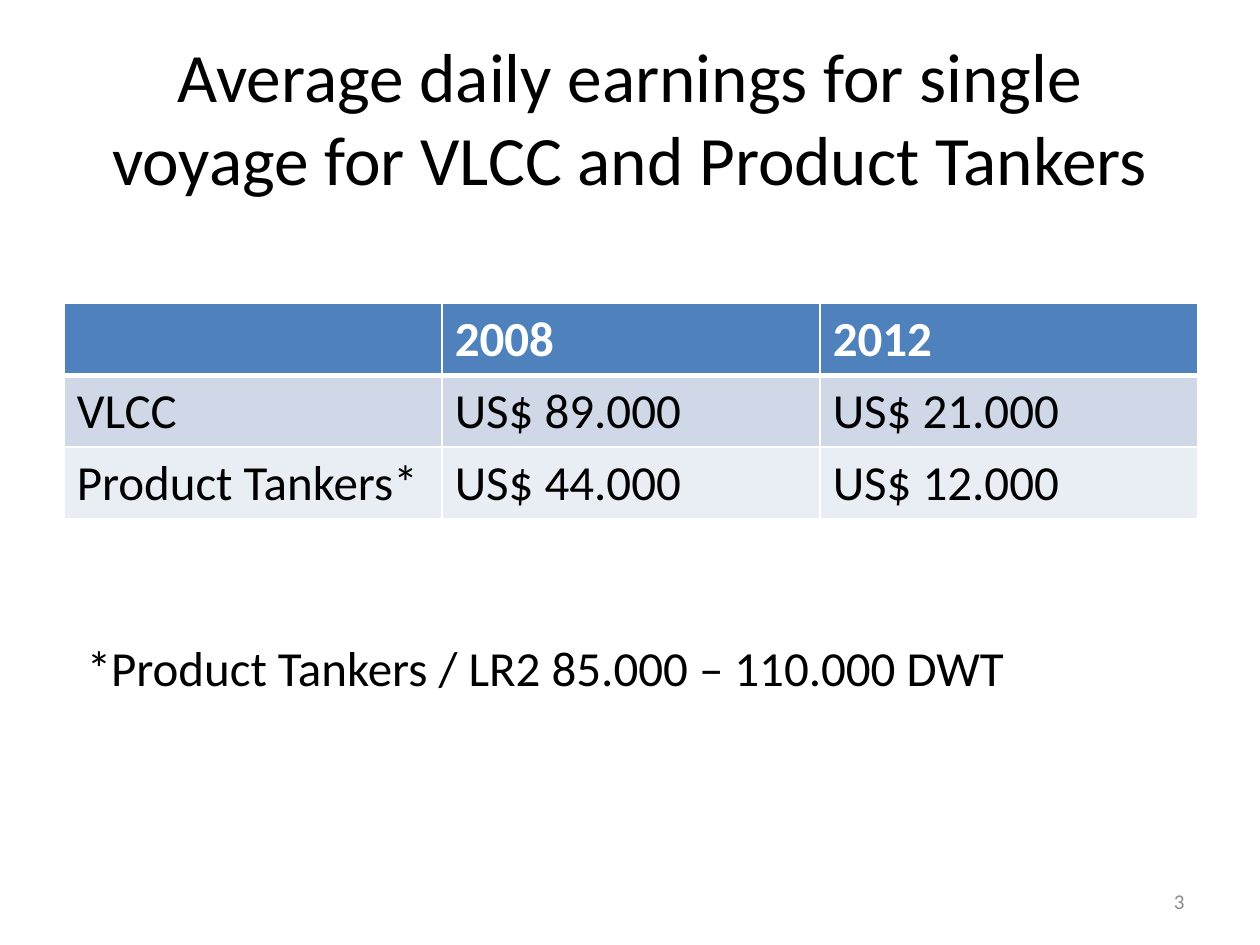
from lxml import etree
from pptx import Presentation, util as u
from pptx.dml.color import RGBColor
from pptx.enum import text as t
from pptx.oxml.ns import qn

BLACK = RGBColor(0x00, 0x00, 0x00)
WHITE = RGBColor(0xFF, 0xFF, 0xFF)
GRAY = RGBColor(0x8C, 0x8C, 0x8C)
BLUE = RGBColor(0x4F, 0x81, 0xBD)
BANDS = [BLUE, RGBColor(0xD0, 0xD8, 0xE8), RGBColor(0xE9, 0xED, 0xF4)]
FONT = "Calibri"

deck = Presentation()
deck.slide_width, deck.slide_height = u.Inches(10), u.Inches(7.5)
slide = deck.slides.add_slide(deck.slide_layouts[6])


def write(para, words, size, color, bold=False):
    run = para.add_run()
    run.text = words
    run.font.name, run.font.size = FONT, u.Pt(size)
    run.font.color.rgb, run.font.bold = color, bold


def edge(cell, side, width):
    line = etree.SubElement(cell._tc.get_or_add_tcPr(), qn("a:ln" + side),
                            w=str(u.Pt(width)))
    fill = etree.SubElement(line, qn("a:solidFill"))
    etree.SubElement(fill, qn("a:srgbClr"), val=str(WHITE))


# Title, footnote and slide number: place, words, size, color, align, anchor
A, V = t.PP_ALIGN, t.MSO_ANCHOR
texts = [
    ((0.5, 0.3, 9, 1.25),
     "Average daily earnings for single voyage for VLCC and Product Tankers",
     39.6, BLACK, A.CENTER, V.MIDDLE),
    ((0.59, 5.01, 8.82, 0.57), "*Product Tankers / LR2 85.000 – 110.000 DWT",
     28, BLACK, A.LEFT, V.TOP),
    ((7.17, 6.95, 2.33, 0.4), "3", 12, GRAY, A.RIGHT, V.MIDDLE),
]
for place, words, size, color, align, anchor in texts:
    box = slide.shapes.add_textbox(*map(u.Inches, place))
    frame = box.text_frame
    frame.word_wrap, frame.vertical_anchor = True, anchor
    para = frame.paragraphs[0]
    para.alignment = align
    write(para, words, size, color)

# Earnings table
rows = [
    ["", "2008", "2012"],
    ["VLCC", "US$ 89.000", "US$ 21.000"],
    ["Product Tankers*", "US$ 44.000", "US$ 12.000"],
]
grid = slide.shapes.add_table(3, 3, u.Inches(0.51), u.Inches(2.41),
                              u.Inches(9), u.Inches(1.71)).table
for r, row in enumerate(rows):
    head = r == 0
    for c, words in enumerate(row):
        cell = grid.cell(r, c)
        for side in "LRTB":
            thick = (head and side == "B") or (r == 1 and side == "T")
            edge(cell, side, 3 if thick else 1)
        cell.fill.solid()
        cell.fill.fore_color.rgb = BANDS[r]
        para = cell.text_frame.paragraphs[0]
        if words:
            write(para, words, 28, WHITE if head else BLACK, head)

deck.save("out.pptx")
